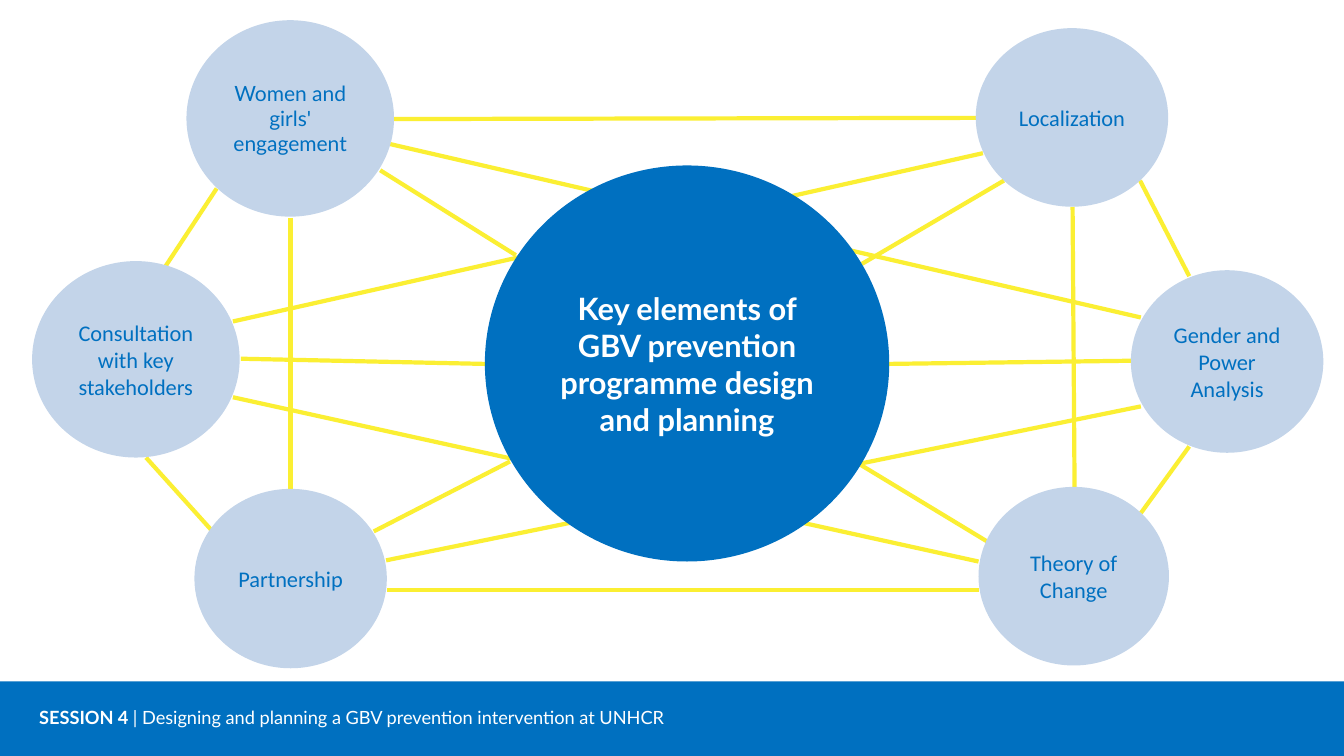
from lxml.etree import SubElement
from pptx import Presentation
from pptx.dml.color import RGBColor
from pptx.enum.shapes import MSO_CONNECTOR, MSO_SHAPE
from pptx.enum.text import MSO_ANCHOR, PP_ALIGN
from pptx.oxml.ns import qn
from pptx.util import Cm, Pt

COLOURS = {"blue": "0070C0", "pale": "C3D4E9", "yellow": "FBEF33", "white": "FFFFFF"}

LABEL = {"name": "Calibri", "size": Pt(16), "bold": False}
LATO_LABEL = {"name": "Lato", "size": Pt(15), "bold": False}
TITLE = {"name": "Lato", "size": Pt(22), "bold": True}
SESSION = {"name": "Lato", "size": Pt(13), "bold": True}
TOPIC = {**SESSION, "bold": False}

ELEMENTS = [
    ("Women and girls' engagement", (4.7, 0.51, 5.23, 4.95), LATO_LABEL),
    ("Consultation with key stakeholders", (0.81, 6.58, 5.23, 4.95), LABEL),
    ("Partnership", (4.9, 12.32, 4.85, 4.52), LABEL),
    ("Localization", (24.59, 0.71, 4.85, 4.5), LABEL),
    ("Gender and Power Analysis", (28.5, 6.81, 4.85, 4.6), LABEL),
    ("Theory of Change", (24.66, 12.27, 4.8, 4.5), LABEL),
]

LINKS = [
    (9.42, 13.39, 12.85, 11.63),
    (7.32, 5.49, 7.32, 12.32),
    (3.68, 11.53, 5.33, 13.36),
    (4.17, 6.71, 5.46, 4.75),
    (6.07, 9.04, 12.22, 9.17),
    (9.58, 4.29, 13, 6.43),
    (24.59, 2.97, 9.93, 3),
    (25.3, 4.55, 21.72, 6.65),
    (24.77, 3.86, 5.87, 8.1),
    (28.73, 4.55, 29.97, 6.96),
    (28.5, 9.09, 22.4, 9.17),
    (28.75, 8, 9.83, 3.63),
    (28.75, 10.24, 9.73, 14.12),
    (24.66, 14.86, 9.75, 14.86),
    (27.03, 5.21, 27.08, 12.27),
    (28.75, 12.93, 29.97, 11.25),
    (24.87, 13.64, 13.16, 6.55),
    (24.66, 14.15, 5.87, 10.01),
]


def colour(name):
    return RGBColor.from_string(COLOURS[name])


def add_filled(page, kind, place, fill):
    shape = page.shapes.add_shape(kind, *map(Cm, place))
    shape.shadow.inherit = False
    shape.fill.solid()
    shape.fill.fore_color.rgb = colour(fill)
    shape.line.fill.background()
    return shape


def add_span(para, text, style, ink):
    span = para.add_run()
    span.text = text
    for key, value in style.items():
        setattr(span.font, key, value)
    span.font.color.rgb = colour(ink)


def add_bubble(page, text, place, style, fill="pale", ink="blue"):
    frame = add_filled(page, MSO_SHAPE.OVAL, place, fill).text_frame
    frame.word_wrap = True
    frame.vertical_anchor = MSO_ANCHOR.MIDDLE
    para = frame.paragraphs[0]
    para.alignment = PP_ALIGN.CENTER
    add_span(para, text, style, ink)


def add_link(page, ends):
    link = page.shapes.add_connector(MSO_CONNECTOR.STRAIGHT, *map(Cm, ends))
    link.line.color.rgb = colour("yellow")
    link.line.width = Pt(3)
    SubElement(link._element.spPr, qn("a:effectLst"))


def add_footer(page):
    add_filled(page, MSO_SHAPE.RECTANGLE, (0, 17.17, 33.87, 1.88), "blue")
    box = page.shapes.add_textbox(*map(Cm, (0.74, 17.68, 17.65, 0.81)))
    frame = box.text_frame
    frame.word_wrap = True
    frame.vertical_anchor = MSO_ANCHOR.MIDDLE
    para = frame.paragraphs[0]
    add_span(para, "SESSION 4 ", SESSION, "white")
    topic = "| Designing and planning a GBV prevention intervention at UNHCR"
    add_span(para, topic, TOPIC, "white")


def main():
    deck = Presentation()
    deck.slide_width, deck.slide_height = Cm(33.87), Cm(19.05)
    page = deck.slides.add_slide(deck.slide_layouts[6])
    add_footer(page)
    for ends in LINKS:
        add_link(page, ends)
    for text, place, style in ELEMENTS:
        add_bubble(page, text, place, style)
    add_bubble(
        page,
        "Key elements of GBV prevention programme design and planning",
        (12.22, 4.17, 10.19, 9.98),
        TITLE,
        fill="blue",
        ink="white",
    )
    deck.save("out.pptx")


if __name__ == "__main__":
    main()
